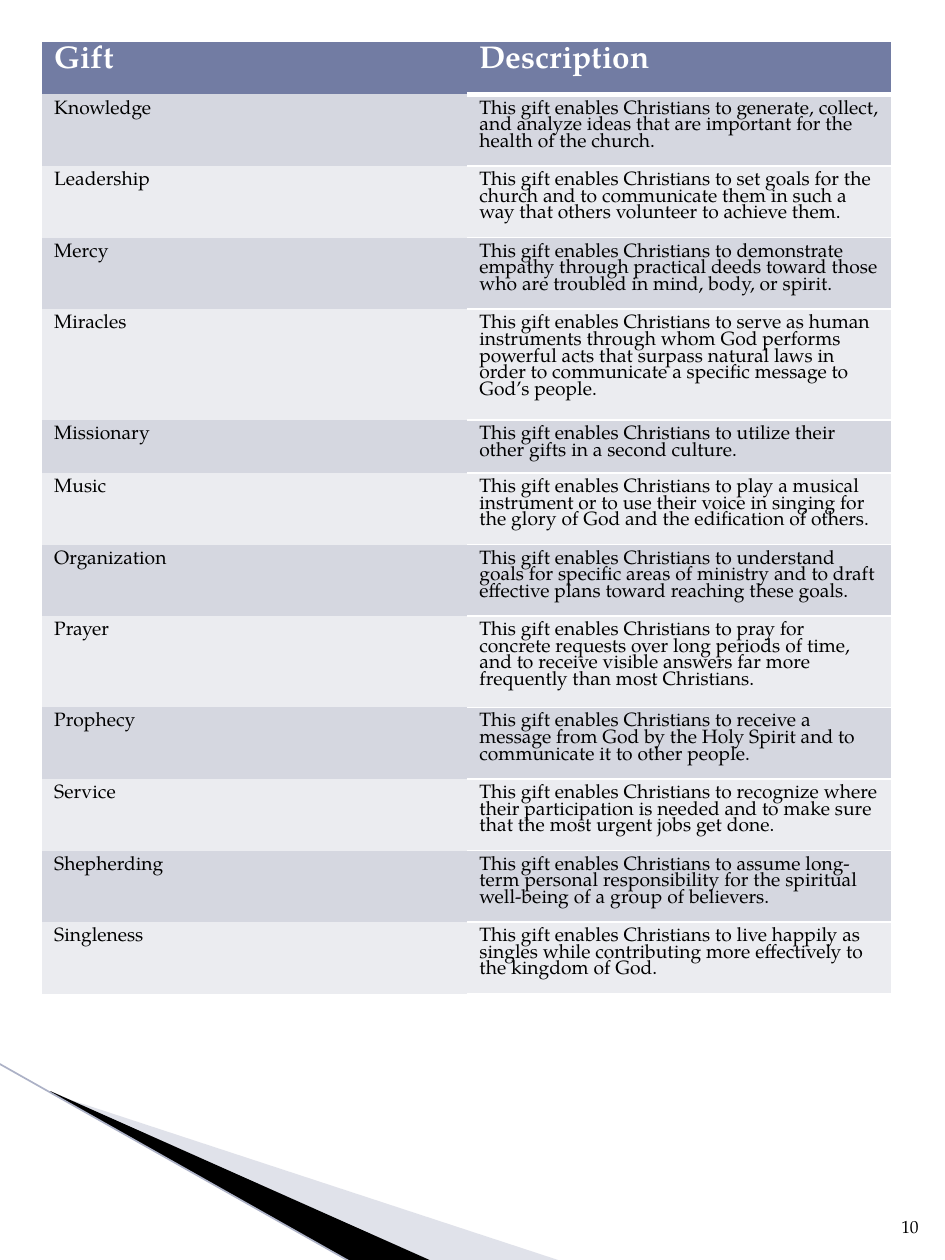
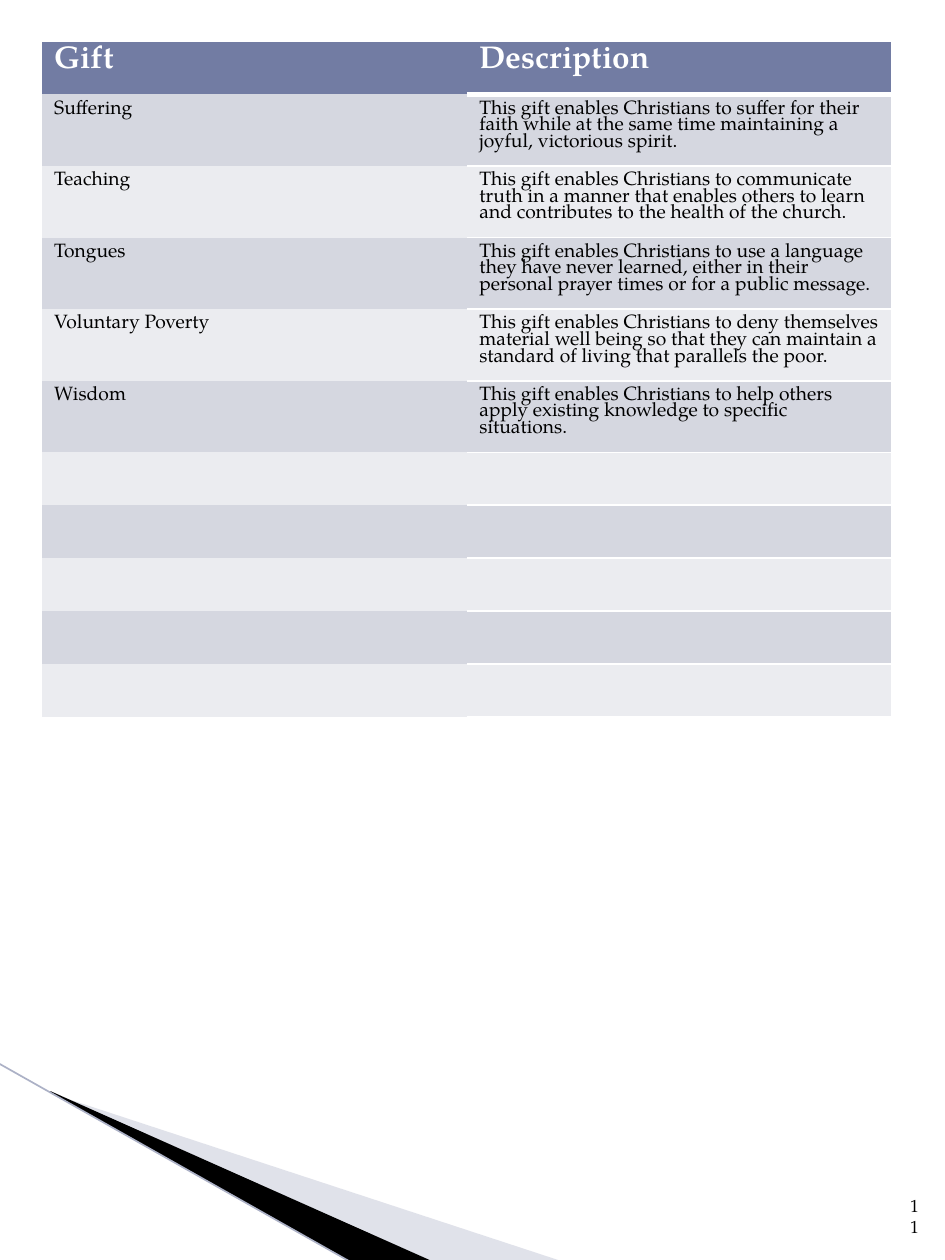
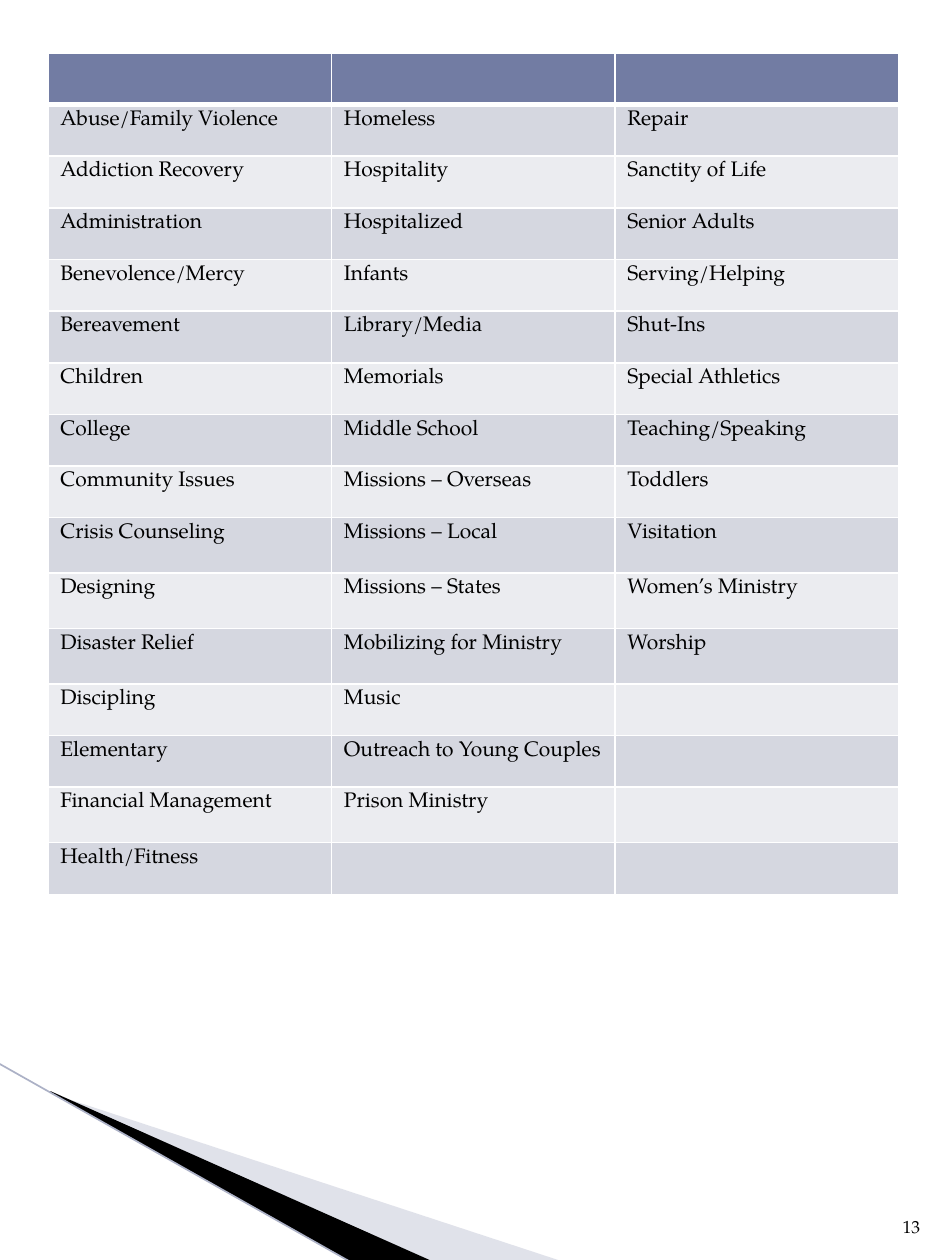
import pptx
import pptx.dml.color
import pptx.enum.shapes
import pptx.enum.text
import pptx.oxml
import pptx.oxml.ns
import pptx.util
from pptx.util import Inches

RGBColor = pptx.dml.color.RGBColor

WHITE = RGBColor(0xFF, 0xFF, 0xFF)
BLACK = RGBColor(0x00, 0x00, 0x00)
HEADER = RGBColor(0x72, 0x7C, 0xA3)
BANDS = (RGBColor(0xD5, 0xD7, 0xE0), RGBColor(0xEB, 0xEC, 0xF0))
WEDGE = RGBColor(0xB3, 0xB7, 0xCB)
EDGE = RGBColor(0xAC, 0xB1, 0xC6)

FONT = "TeX Gyre Pagella"
NO_STYLE = "{2D5ABB26-0587-4C30-8999-92F81FD0307C}"
TABLE_WIDTH = 6.75
LINE_SPACING = 0.85

GIFT_HEADINGS = ("Gift", "Description")
GIFTS = [
    ("Knowledge", "generate, collect, and analyze ideas that are important for the health of the church."),
    ("Leadership", "set goals for the church and to communicate them in such a way that others volunteer to achieve them."),
    ("Mercy", "demonstrate empathy through practical deeds toward those who are troubled in mind, body, or spirit."),
    ("Miracles", "serve as human instruments through whom God performs powerful acts that surpass natural laws "
                 "in order to communicate a specific message to God’s people."),
    ("Missionary", "utilize their other gifts in a second culture."),
    ("Music", "play a musical instrument or to use their voice in singing for the glory of God "
              "and the edification of others."),
    ("Organization", "understand goals for specific areas of ministry and to draft effective plans "
                     "toward reaching these goals."),
    ("Prayer", "pray for concrete requests over long periods of time, and to receive visible answers "
               "far more frequently than most Christians."),
    ("Prophecy", "receive a message from God by the Holy Spirit and to communicate it to other people."),
    ("Service", "recognize where their participation is needed and to make sure that the most urgent jobs get done."),
    ("Shepherding", "assume long-term personal responsibility for the spiritual well-being of a group of believers."),
    ("Singleness", "live happily as singles while contributing more effectively to the kingdom of God."),
]
MORE_GIFTS = [
    ("Suffering", "suffer for their faith while at the same time maintaining a joyful, victorious spirit."),
    ("Teaching", "communicate truth in a manner that enables others to learn and contributes to the health of the church."),
    ("Tongues", "use a language they have never learned, either in their personal prayer times or for a public message."),
    ("Voluntary Poverty", "deny themselves material well being so that they can maintain a standard of living "
                          "that parallels the poor."),
    ("Wisdom", "help others apply existing knowledge to specific situations."),
]
MINISTRIES = [
    ("Abuse/Family Violence", "Homeless", "Repair"),
    ("Addiction Recovery", "Hospitality", "Sanctity of Life"),
    ("Administration", "Hospitalized", "Senior Adults"),
    ("Benevolence/Mercy", "Infants", "Serving/Helping"),
    ("Bereavement", "Library/Media", "Shut-Ins"),
    ("Children", "Memorials", "Special Athletics"),
    ("College", "Middle School", "Teaching/Speaking"),
    ("Community Issues", "Missions – Overseas", "Toddlers"),
    ("Crisis Counseling", "Missions – Local", "Visitation"),
    ("Designing", "Missions – States", "Women’s Ministry"),
    ("Disaster Relief", "Mobilizing for Ministry", "Worship"),
    ("Discipling", "Music", ""),
    ("Elementary", "Outreach to Young Couples", ""),
    ("Financial Management", "Prison Ministry", ""),
    ("Health/Fitness", "", ""),
]
TALL_MINISTRY_ROWS = (9, 10, 11, 14)


def format_runs(paragraph, size, color, bold=False):
    for run in paragraph.runs:
        run.font.name = FONT
        run.font.size = pptx.util.Pt(size)
        run.font.color.rgb = color
        run.font.bold = bold


def add_wedge(slide, points, color, opacity=None):
    start, *rest = [(Inches(x), Inches(y)) for x, y in points]
    builder = slide.shapes.build_freeform(*start)
    builder.add_line_segments(rest)
    wedge = builder.convert_to_shape()
    wedge.shadow.inherit = False
    wedge.fill.solid()
    wedge.fill.fore_color.rgb = color
    wedge.line.fill.background()
    if opacity is not None:
        tint = wedge.fill._xPr.find(".//" + pptx.oxml.ns.qn("a:srgbClr"))
        pptx.oxml.ns.qn("a:alpha")
        alpha = tint.makeelement(pptx.oxml.ns.qn("a:alpha"), {"val": str(opacity * 1000)})
        tint.append(alpha)


def add_corner_bands(slide):
    add_wedge(slide, [(0.41, 8.68), (4.46, 10.01), (3.42, 10.01), (0.41, 8.67)], WEDGE, 40)
    add_wedge(slide, [(0.4, 8.66), (3.43, 10.01), (2.79, 10.02), (0.4, 8.67)], BLACK)
    edge = slide.shapes.add_connector(
        pptx.enum.shapes.MSO_CONNECTOR.STRAIGHT,
        Inches(-0.01), Inches(8.44), Inches(2.79), Inches(10.02))
    edge.line.color.rgb = EDGE
    edge.line.width = pptx.util.Pt(0.95)
    properties = edge._element.spPr
    properties.append(properties.makeelement(pptx.oxml.ns.qn("a:effectLst"), {}))


def add_page_number(slide, number, left, width):
    box = slide.shapes.add_textbox(Inches(left), Inches(9.34), Inches(width), Inches(0.53))
    frame = box.text_frame
    frame.word_wrap = True
    frame.vertical_anchor = pptx.enum.text.MSO_ANCHOR.BOTTOM
    frame.text = str(number)
    frame.paragraphs[0].alignment = pptx.enum.text.PP_ALIGN.RIGHT
    format_runs(frame.paragraphs[0], 10, BLACK)


def set_borders(cell, widths):
    properties = cell._tc.get_or_add_tcPr()
    for position, (side, points) in enumerate(widths.items()):
        border = pptx.oxml.parse_xml(
            f'<a:{side} {pptx.oxml.ns.nsdecls("a")} w="{pptx.util.Pt(points)}">'
            f'<a:solidFill><a:srgbClr val="{WHITE}"/></a:solidFill></a:{side}>')
        properties.insert(position, border)


def add_banded_table(slide, left, top, rows, heights, body_size, ruled_columns, sides):
    count = len(rows[0])
    frame = slide.shapes.add_table(
        len(rows), count, Inches(left), Inches(top), Inches(TABLE_WIDTH), Inches(sum(heights)))
    table = frame.table
    table._tbl.tblPr.find(pptx.oxml.ns.qn("a:tableStyleId")).text = NO_STYLE
    for column in table.columns:
        column.width = Inches(TABLE_WIDTH / count)
    for r, (texts, height) in enumerate(zip(rows, heights)):
        table.rows[r].height = Inches(height)
        is_header = r == 0
        for c, text in enumerate(texts):
            cell = table.cell(r, c)
            cell.fill.solid()
            cell.fill.fore_color.rgb = HEADER if is_header else BANDS[(r - 1) % 2]
            if c in ruled_columns:
                widths = dict.fromkeys(sides, 1)
                if is_header:
                    widths["lnB"] = 3
                elif r == 1:
                    widths["lnT"] = 3
                set_borders(cell, widths)
            if text:
                cell.text_frame.text = text
                paragraph = cell.text_frame.paragraphs[0]
                paragraph.line_spacing = LINE_SPACING
                if is_header:
                    format_runs(paragraph, 18, WHITE, True)
                else:
                    format_runs(paragraph, body_size, BLACK)


def add_gift_table(slide, gifts, blank_rows=0):
    described = [(gift, f"This gift enables Christians to {purpose}") for gift, purpose in gifts]
    rows = [GIFT_HEADINGS] + described + [("", "")] * blank_rows
    add_banded_table(slide, 0.33, 0.33, rows, [0.42] * len(rows), 11, (1,), ("lnR", "lnT", "lnB"))


def add_ministry_table(slide):
    rows = [("", "", "")] + MINISTRIES
    heights = [0.44 if r in TALL_MINISTRY_ROWS else 0.41 for r in range(len(rows))]
    add_banded_table(slide, 0.38, 0.42, rows, heights, 12, (0, 1, 2), ("lnL", "lnR", "lnT", "lnB"))


def add_page(deck, number, number_left, number_width):
    slide = deck.slides.add_slide(deck.slide_layouts[6])
    add_corner_bands(slide)
    add_page_number(slide, number, number_left, number_width)
    return slide


def main():
    deck = pptx.Presentation()
    deck.slide_width = Inches(7.5)
    deck.slide_height = Inches(10)
    add_gift_table(add_page(deck, 10, 6.83, 0.56), GIFTS)
    add_gift_table(add_page(deck, 11, 7.09, 0.3), MORE_GIFTS, blank_rows=5)
    add_ministry_table(add_page(deck, 13, 6.92, 0.48))
    deck.save("out.pptx")


if __name__ == "__main__":
    main()
